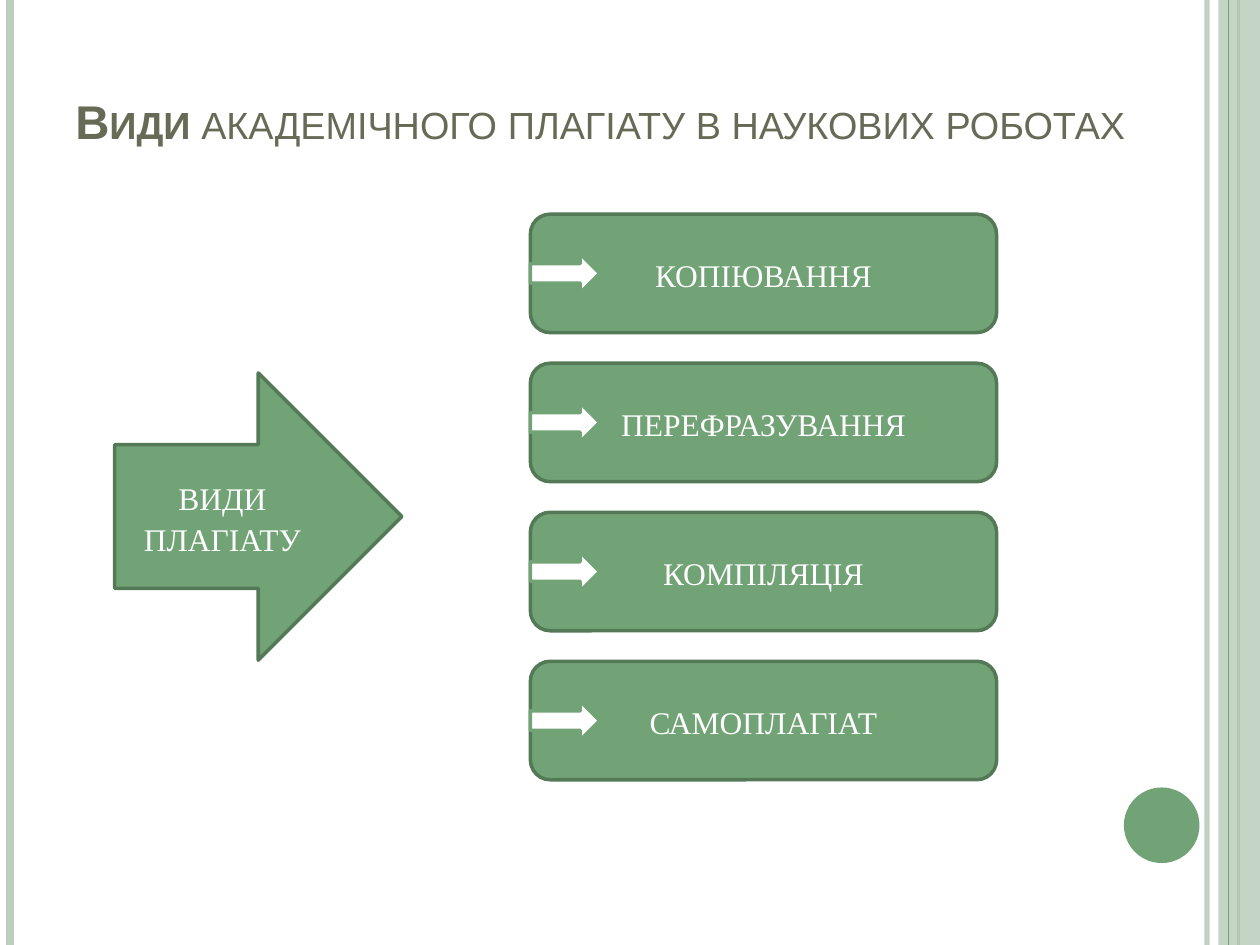
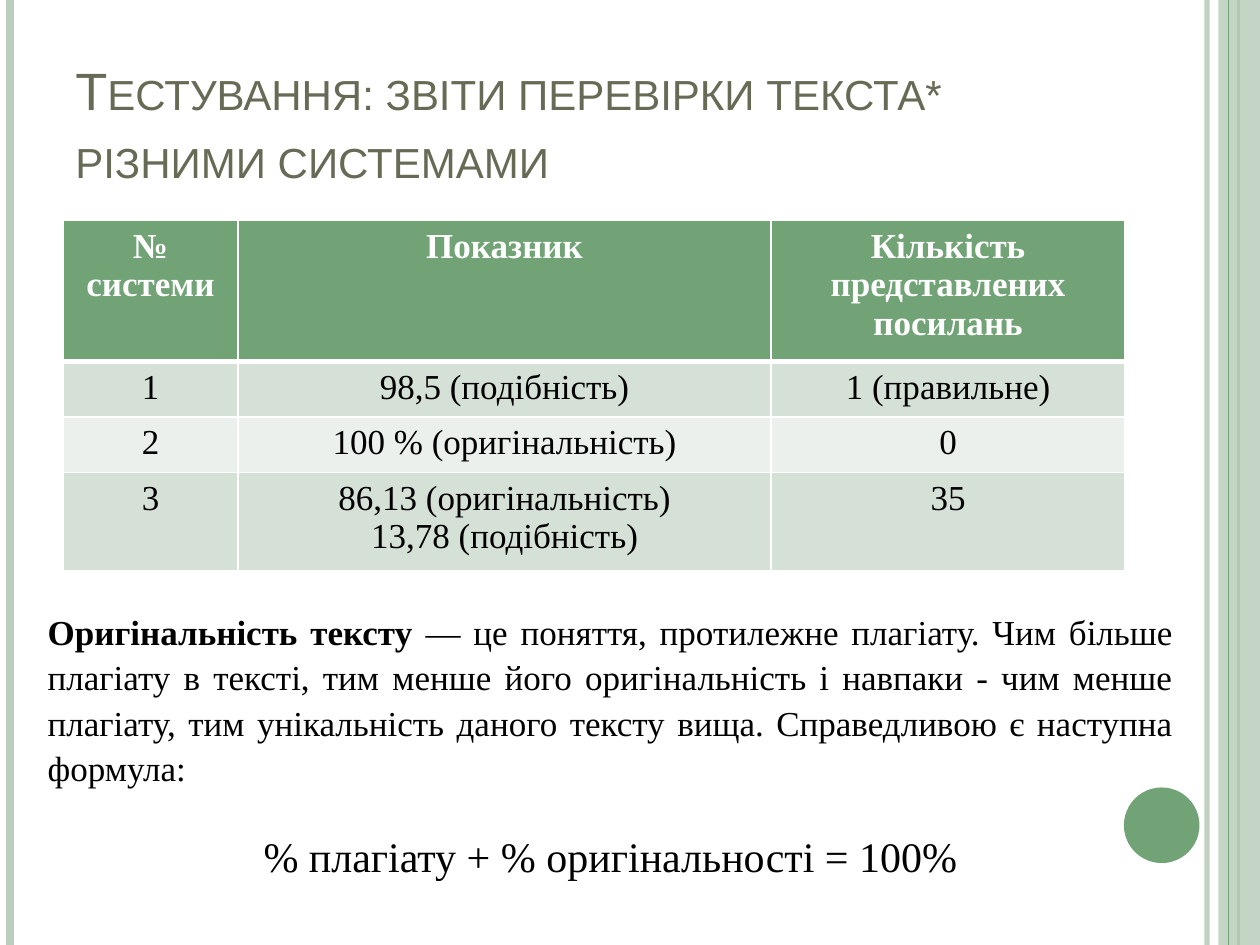
from dataclasses import dataclass
from typing import NamedTuple

from lxml import etree
from pptx import Presentation
from pptx import util as u
from pptx.dml import color
from pptx.enum import shapes, text
from pptx.oxml import ns

WIDTH, HEIGHT = 10, 7.5
GREEN, DARK_GREEN, PALE_GREEN = "72A376", "547957", "BCCEBD"
TITLE_COLOUR, WHITE, BLACK = "676A55", "FFFFFF", "000000"
ROW_TINTS = ("D5E0D6", "EBF0EC")
SANS, SERIF = "Arial", "Times New Roman"
CENTRE, JUSTIFY, LEFT = text.PP_ALIGN.CENTER, text.PP_ALIGN.JUSTIFY, text.PP_ALIGN.LEFT
KINDS = shapes.MSO_SHAPE


class Area(NamedTuple):
    left: float
    top: float
    width: float
    height: float

    def lengths(self) -> list:
        return [u.Inches(value) for value in self]


class Stripe(NamedTuple):
    x: float
    colour: str
    weight: float
    opacity: int = 100


@dataclass
class Span:
    words: str
    size: float
    colour: str = BLACK
    font: str = SERIF
    bold: bool = False
    small_caps: bool = False


@dataclass
class Para:
    spans: list[Span]
    align: int = CENTRE
    spacing: float = 1.08
    before: float = 0


LEFT_STRIPES = (Stripe(9.58, PALE_GREEN, 3, 93), Stripe(0.08, PALE_GREEN, 4.5),
                Stripe(9.83, GREEN, 1.5))
BAND = Area(9.67, 0, 0.33, HEIGHT)
BAND_STRIPE = Stripe(9.75, GREEN, 0.75)
DISC = Area(8.92, 6.25, 0.6, 0.6)

KINDS_ARROW = Area(0.91, 2.96, 2.28, 2.28)
CARD = Area(4.21, 1.7, 3.7, 0.94)
CARD_PITCH = 1.183
POINTER_WIDTH, POINTER_HEIGHT = 0.55, 0.31
CARD_LABELS = ("КОПІЮВАННЯ", "ПЕРЕФРАЗУВАННЯ", "КОМПІЛЯЦІЯ", "САМОПЛАГІАТ")

REPORT_AREA = Area(0.5, 1.75, 8.43, 2.78)
REPORT_COLUMNS = (1.39, 4.23, 2.81)
REPORT_ROWS = (1.12, 0.44, 0.44, 0.78)
REPORT = (
    ("№ системи", "Показник", "Кількість представлених посилань"),
    ("1", "98,5 (подібність)", "1 (правильне)"),
    ("2", "100 % (оригінальність)", "0"),
    ("3", "86,13 (оригінальність)\n13,78 (подібність)", "35"),
)


def rgb(value: str) -> color.RGBColor:
    return color.RGBColor.from_string(value)


def set_opacity(element, percent: int) -> None:
    """Make the first colour inside the element partly transparent."""
    if percent < 100:
        tint = next(element.iter(ns.qn("a:srgbClr")))
        etree.SubElement(tint, ns.qn("a:alpha")).set("val", str(percent * 1000))


def write(frame, paras: list[Para]) -> None:
    frame.word_wrap = True
    for index, item in enumerate(paras):
        para = frame.paragraphs[0] if index == 0 else frame.add_paragraph()
        para.alignment = item.align
        para.line_spacing = item.spacing
        para.space_before = u.Pt(item.before)
        for span in item.spans:
            run = para.add_run()
            run.text = span.words
            run.font.size = u.Pt(span.size)
            run.font.name = span.font
            run.font.bold = span.bold
            run.font.color.rgb = rgb(span.colour)
            if span.small_caps:
                run.font._element.set("cap", "small")


def add_text(page, area: Area, paras: list[Para], anchor=text.MSO_ANCHOR.TOP) -> None:
    box = page.shapes.add_textbox(*area.lengths())
    box.text_frame.vertical_anchor = anchor
    write(box.text_frame, paras)


def add_title(page, area: Area, spans: list[Span]) -> None:
    add_text(page, area, [Para(spans, LEFT)], text.MSO_ANCHOR.BOTTOM)


def title_span(words: str, size: float, bold: bool = False) -> Span:
    return Span(words, size, TITLE_COLOUR, SANS, bold, small_caps=True)


def add_figure(page, kind, area: Area, fill: str, outline: str = "", opacity: int = 100,
               labels: tuple[str, ...] = ()) -> None:
    figure = page.shapes.add_shape(kind, *area.lengths())
    figure.shadow.inherit = False
    figure.fill.solid()
    figure.fill.fore_color.rgb = rgb(fill)
    set_opacity(figure._element.spPr, opacity)
    if outline:
        figure.line.color.rgb = rgb(outline)
        figure.line.width = u.Pt(2)
    else:
        figure.line.fill.background()
    if labels:
        figure.text_frame.vertical_anchor = text.MSO_ANCHOR.MIDDLE
        write(figure.text_frame, [Para([Span(label, 18, WHITE)]) for label in labels])


def add_stripe(page, stripe: Stripe) -> None:
    x = u.Inches(stripe.x)
    line = page.shapes.add_connector(shapes.MSO_CONNECTOR.STRAIGHT, x, 0, x, u.Inches(HEIGHT))
    line.line.color.rgb = rgb(stripe.colour)
    line.line.width = u.Pt(stripe.weight)
    set_opacity(line._element.spPr, stripe.opacity)
    etree.SubElement(line._element.spPr, ns.qn("a:effectLst"))


def add_page(deck):
    """Add a blank page with the side stripes, the band and the disc."""
    page = deck.slides.add_slide(deck.slide_layouts[6])
    for stripe in LEFT_STRIPES:
        add_stripe(page, stripe)
    add_figure(page, KINDS.RECTANGLE, BAND, PALE_GREEN, opacity=87)
    add_stripe(page, BAND_STRIPE)
    add_figure(page, KINDS.OVAL, DISC, GREEN)
    return page


def set_borders(cell, weights: dict[str, float]) -> None:
    """Draw white cell edges; they must precede the fill in the cell's XML."""
    properties = cell._tc.get_or_add_tcPr()
    for index, (side, weight) in enumerate(weights.items()):
        edge = etree.Element(ns.qn(f"a:ln{side}"), w=str(u.Pt(weight)))
        fill = etree.SubElement(edge, ns.qn("a:solidFill"))
        etree.SubElement(fill, ns.qn("a:srgbClr")).set("val", WHITE)
        properties.insert(index, edge)


def add_report(page) -> None:
    table = page.shapes.add_table(len(REPORT_ROWS), len(REPORT_COLUMNS),
                                  *REPORT_AREA.lengths()).table
    for column, width in zip(table.columns, REPORT_COLUMNS):
        column.width = u.Inches(width)
    for row_index, (row, height) in enumerate(zip(table.rows, REPORT_ROWS)):
        row.height = u.Inches(height)
        header = row_index == 0
        fill = GREEN if header else ROW_TINTS[(row_index - 1) % 2]
        for cell, words in zip(row.cells, REPORT[row_index]):
            cell.fill.solid()
            cell.fill.fore_color.rgb = rgb(fill)
            set_borders(cell, {"L": 1, "R": 1, "T": 3 if row_index == 1 else 1,
                               "B": 3 if header else 1})
            write(cell.text_frame,
                  [Para([Span(line, 20, WHITE if header else BLACK, bold=header)], spacing=1.0)
                   for line in words.split("\n")])


def build_kinds_page(deck) -> None:
    page = add_page(deck)
    add_title(page, Area(0.5, 0.3, 9.07, 0.93),
              [title_span("Види ", 27, bold=True),
               title_span("академічного плагіату в наукових роботах", 27)])
    add_figure(page, KINDS.RIGHT_ARROW, KINDS_ARROW, GREEN, DARK_GREEN,
               labels=("ВИДИ", "ПЛАГІАТУ"))
    for index, label in enumerate(CARD_LABELS):
        card = CARD._replace(top=CARD.top + index * CARD_PITCH)
        pointer = Area(card.left, card.top + (card.height - POINTER_HEIGHT) / 2,
                       POINTER_WIDTH, POINTER_HEIGHT)
        add_figure(page, KINDS.ROUNDED_RECTANGLE, card, GREEN, DARK_GREEN, labels=(label,))
        add_figure(page, KINDS.RIGHT_ARROW, pointer, WHITE, GREEN)


def build_report_page(deck) -> None:
    page = add_page(deck)
    add_title(page, Area(0.5, 0.3, 8.17, 1.25),
              [title_span("Тестування: звіти перевірки текста* різними системами", 30)])
    add_report(page)
    add_text(page, Area(0.28, 4.77, 9.13, 2.46), [
        Para([Span("Оригінальність тексту", 20, bold=True),
              Span(" — це поняття, протилежне плагіату. Чим більше плагіату в тексті, "
                   "тим менше його оригінальність і навпаки - чим менше плагіату, "
                   "тим унікальність даного тексту вища. Справедливою є наступна формула:", 20)],
             JUSTIFY),
        Para([Span("% плагіату + % оригінальності = 100%", 24)], before=21.5),
    ])


def main() -> None:
    deck = Presentation()
    deck.slide_width, deck.slide_height = u.Inches(WIDTH), u.Inches(HEIGHT)
    build_kinds_page(deck)
    build_report_page(deck)
    deck.save("out.pptx")


if __name__ == "__main__":
    main()
